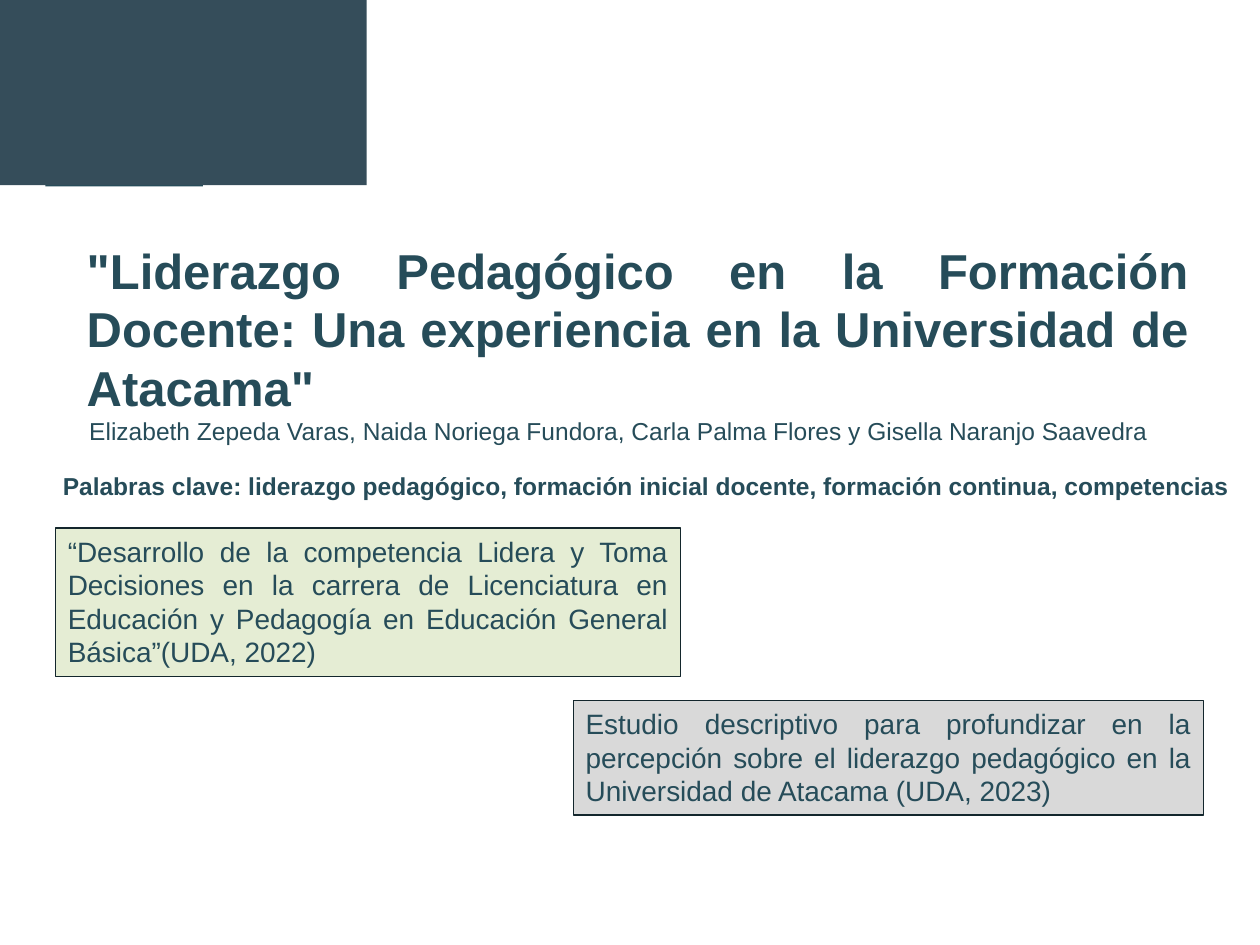
from dataclasses import dataclass, field
from typing import Optional

from pptx import Presentation
from pptx import util as u
from pptx.dml.color import RGBColor
from pptx.enum import shapes, text

INK = "264C59"
BORDER = "13262C"


@dataclass
class Block:
    """A rectangle or text box, with lengths in inches."""
    left: float
    top: float
    width: float
    height: float
    fill: str


@dataclass
class TextBlock:
    left: float
    top: float
    width: float
    height: float
    words: str
    size: int
    bold: bool = False
    fill: Optional[str] = None
    anchor: text.MSO_ANCHOR = text.MSO_ANCHOR.TOP
    paragraph: dict = field(default_factory=dict)


def color(value: str) -> RGBColor:
    return RGBColor.from_string(value)


def place(item) -> list:
    return [u.Inches(n) for n in (item.left, item.top, item.width, item.height)]


def set_format(target, values: dict) -> None:
    for name, value in values.items():
        setattr(target, name, value)


def add_rectangle(s, item):
    sp = s.shapes.add_shape(shapes.MSO_SHAPE.RECTANGLE, *place(item))
    sp.shadow.inherit = False
    sp.fill.solid()
    sp.fill.fore_color.rgb = color(item.fill)
    sp.line.fill.background()
    return sp


def add_text(s, item: TextBlock) -> None:
    if item.fill:
        sp = add_rectangle(s, item)
        sp.line.color.rgb = color(BORDER)
        sp.line.width = u.Pt(0.75)
    else:
        sp = s.shapes.add_textbox(*place(item))
    tf = sp.text_frame
    set_format(tf, {"word_wrap": True, "vertical_anchor": item.anchor})
    p = tf.paragraphs[0]
    set_format(p, {"alignment": text.PP_ALIGN.JUSTIFY, **item.paragraph})
    r = p.add_run()
    r.text = item.words
    set_format(r.font, {"name": "Arial", "size": u.Pt(item.size), "bold": item.bold})
    r.font.color.rgb = color(INK)


# Corner decoration
CORNER = [
    Block(0.36, 0.81, 1.25, 0.67, INK),
    Block(0, 0, 2.91, 1.47, "354D5A"),
]

# Title, authors, keywords and the two studies
TEXTS = [
    TextBlock(0.59, 2.25, 8.94, 0.71,
              '"Liderazgo Pedagógico en la Formación Docente: '
              'Una experiencia en la Universidad de Atacama"',
              28, bold=True, anchor=text.MSO_ANCHOR.MIDDLE),
    TextBlock(0.61, 3.25, 9.08, 0.34,
              "Elizabeth Zepeda Varas, Naida Noriega Fundora, "
              "Carla Palma Flores y Gisella Naranjo Saavedra", 14),
    TextBlock(0.4, 3.57, 9.49, 0.42,
              "Palabras clave: liderazgo pedagógico, formación inicial docente, "
              "formación continua, competencias", 14, bold=True,
              paragraph={"line_spacing": 1.5, "space_after": u.Pt(12)}),
    TextBlock(0.44, 4.19, 4.96, 1.18,
              "“Desarrollo de la competencia Lidera y Toma Decisiones en la carrera "
              "de Licenciatura en Educación y Pedagogía en Educación General "
              "Básica”(UDA, 2022)", 16, fill="E5EDD4"),
    TextBlock(4.55, 5.56, 5, 0.91,
              "Estudio descriptivo para profundizar en la percepción sobre el "
              "liderazgo pedagógico en la Universidad de Atacama (UDA, 2023)",
              16, fill="D9D9D9"),
]


def main() -> None:
    prs = Presentation()
    set_format(prs, {"slide_width": u.Inches(10), "slide_height": u.Inches(7.5)})
    s = prs.slides.add_slide(prs.slide_layouts[6])
    for block in CORNER:
        add_rectangle(s, block)
    for item in TEXTS:
        add_text(s, item)
    prs.save("out.pptx")


if __name__ == "__main__":
    main()
